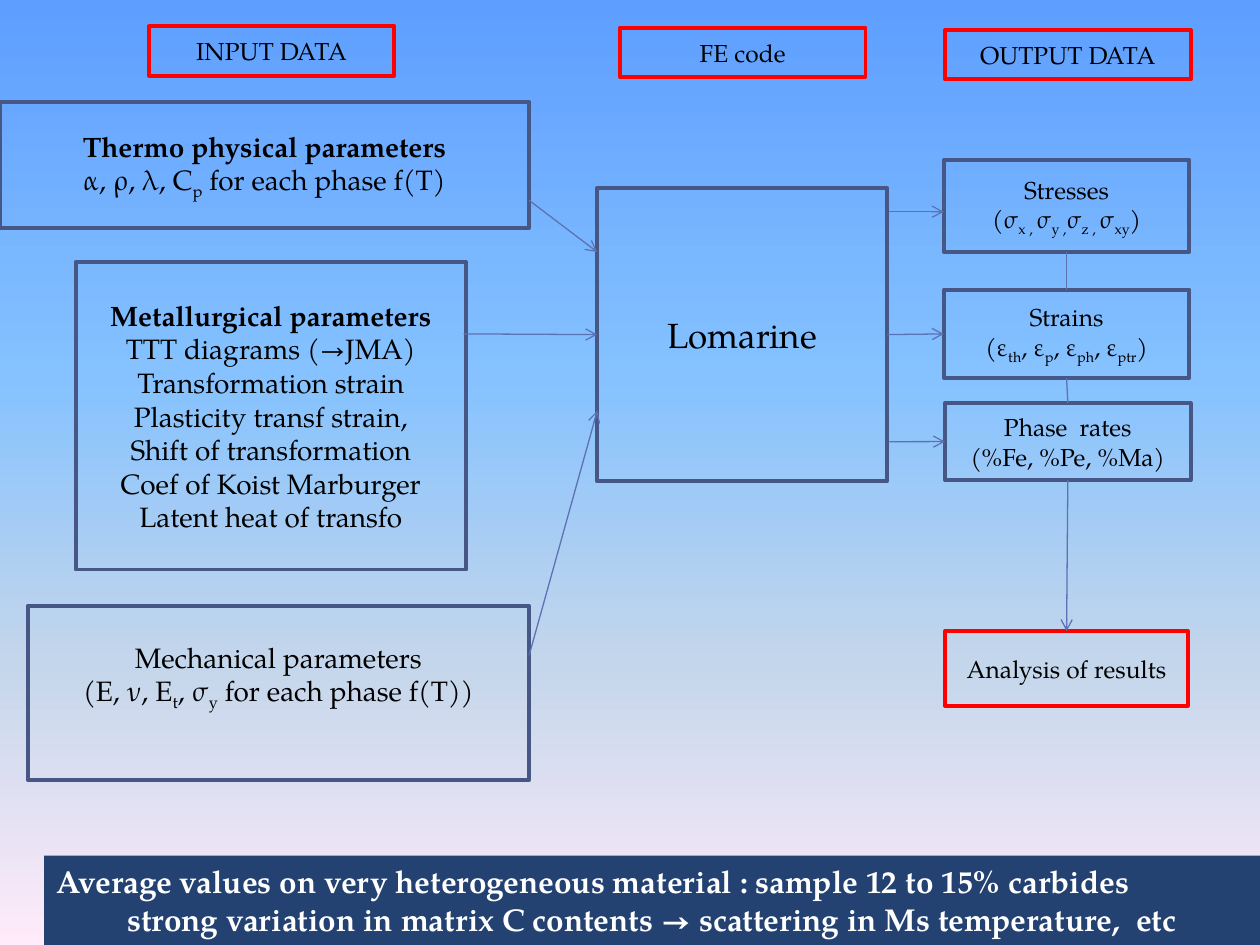
from lxml.etree import SubElement
from pptx import Presentation
from pptx.dml.color import RGBColor
from pptx.enum.shapes import MSO_CONNECTOR, MSO_SHAPE
from pptx.enum.text import MSO_ANCHOR, PP_ALIGN
from pptx.oxml.ns import qn
from pptx.util import Pt

TOP, LEFT, BASE, RIGHT = range(4)
STOPS = [(0, "5E9EFF"), (40, "85C2FF"), (70, "C4D6EB"), (100, "FFEBFA")]


def tint(code):
    return RGBColor.from_string(code)


def put(item, form):
    for name, val in form.items():
        setattr(item, name, val)


class Deck:
    face = "TeX Gyre Pagella"
    edge = "475785"
    red = "FF0000"
    wire = "5C72B2"

    def __init__(self):
        self.file = Presentation()
        put(self.file, {"slide_width": Pt(720), "slide_height": Pt(540)})
        self.slide = self.file.slides.add_slide(self.file.slide_layouts[6])

    def back(self, stops):
        fill = self.slide.background.fill
        fill.gradient()
        fill.gradient_angle = 270
        ramp = self.slide.element.find(".//" + qn("a:gsLst"))
        for old in list(ramp):
            ramp.remove(old)
        for spot, code in stops:
            stop = SubElement(ramp, qn("a:gs"), pos=str(spot * 1000))
            SubElement(stop, qn("a:srgbClr"), val=code)

    def text(self, frame, rows, size, code="000000", align=PP_ALIGN.CENTER):
        for num, row in enumerate(rows):
            para = frame.add_paragraph() if num else frame.paragraphs[0]
            para.alignment = align
            bold = row.startswith("*")
            for turn, part in enumerate(row.lstrip("*").split("|")):
                run = para.add_run()
                run.text = part
                put(run.font, {"name": self.face, "size": Pt(size), "bold": bold})
                run.font.color.rgb = tint(code)
                if turn % 2:
                    run._r.get_or_add_rPr().set("baseline", "-25000")

    def rect(self, area):
        box = self.slide.shapes.add_shape(MSO_SHAPE.RECTANGLE, *map(Pt, area))
        box.shadow.inherit = False
        box.text_frame.word_wrap = True
        return box

    def box(self, area, rows, size=14, edge=edge, **form):
        box = self.rect(area)
        box.fill.background()
        box.line.color.rgb = tint(edge)
        box.line.width = Pt(2.25)
        put(box.text_frame, {"vertical_anchor": MSO_ANCHOR.MIDDLE, **form})
        self.text(box.text_frame, rows, size)
        return box

    def band(self, area, rows):
        box = self.rect(area)
        box.fill.solid()
        box.fill.fore_color.rgb = tint("234271")
        box.line.fill.background()
        put(box.text_frame, {"vertical_anchor": MSO_ANCHOR.TOP, "margin_right": 0})
        self.text(box.text_frame, rows, 18, "FFFFFF", PP_ALIGN.LEFT)

    def link(self, ends=(0, 0, 0, 0), start=None, stop=None, head=True):
        line = self.slide.shapes.add_connector(MSO_CONNECTOR.STRAIGHT, *map(Pt, ends))
        if start:
            line.begin_connect(*start)
        if stop:
            line.end_connect(*stop)
        line.line.color.rgb = tint(self.wire)
        line.line.width = Pt(0.75)
        if head:
            SubElement(line.line._get_or_add_ln(), qn("a:tailEnd"), type="arrow")
        SubElement(line.element.spPr, qn("a:effectLst"))


def main():
    deck = Deck()
    deck.back(STOPS)

    for left, top, name in [(85, 15.1, "INPUT DATA"), (354.2, 15.8, "FE code"),
                            (540, 17.3, "OUTPUT DATA")]:
        deck.box((left, top, 140.4, 28.1), [name], edge=deck.red)

    deck.box((0, 58.3, 302.4, 72),
             ["*Thermo physical parameters", "α, ρ, λ, C|p| for each phase f(T)"], 16)
    deck.box((43.2, 149.8, 223.2, 175.7),
             ["*Metallurgical parameters", "TTT diagrams (→JMA)",
              "Transformation strain", "Plasticity transf strain,",
              "Shift of transformation", "Coef of Koist Marburger",
              "Latent heat of transfo"], 16)
    deck.box((15.8, 346.3, 286.6, 99.4),
             ["Mechanical parameters", "(E, ν, E|t|, σ|y| for each phase f(T))"],
             16, margin_bottom=Pt(22.8))

    code = deck.box((341.3, 107.3, 165.6, 167.8), ["Lomarine"], 20)
    stress = deck.box((539.3, 91.4, 140.4, 52.6),
                      ["Stresses", "(σ|x , |σ|y ,|σ|z , |σ|xy|)"])
    strain = deck.box((539.3, 165.6, 140.4, 50.4),
                      ["Strains", "(ε|th|, ε|p|, ε|ph|, ε|ptr|)"])
    phase = deck.box((540, 230.4, 140.4, 43.9), ["Phase  rates", "(%Fe, %Pe, %Ma)"])
    result = deck.box((540, 360.7, 139, 42.5), ["Analysis of results"], edge=deck.red)

    deck.link((302.4, 114.5, 341.3, 144))
    deck.link((265, 190.8, 341.3, 190.8), stop=(code, LEFT))
    deck.link((302.4, 374.4, 341.3, 234.7))
    deck.link((508.3, 121, 539.3, 121))
    deck.link(start=(code, RIGHT), stop=(strain, LEFT))
    deck.link((508.3, 252.4, 540, 252.4), stop=(phase, LEFT))
    deck.link(start=(stress, BASE), stop=(strain, TOP), head=False)
    deck.link(start=(strain, BASE), stop=(phase, TOP), head=False)
    deck.link(start=(phase, BASE), stop=(result, TOP))

    deck.band((25.2, 488.9, 694.8, 51.1),
              ["*Average values on very heterogeneous material : sample 12 to 15% carbides",
               "*\t strong variation in matrix C contents → scattering in Ms temperature,  etc"])
    deck.file.save("out.pptx")


if __name__ == "__main__":
    main()
